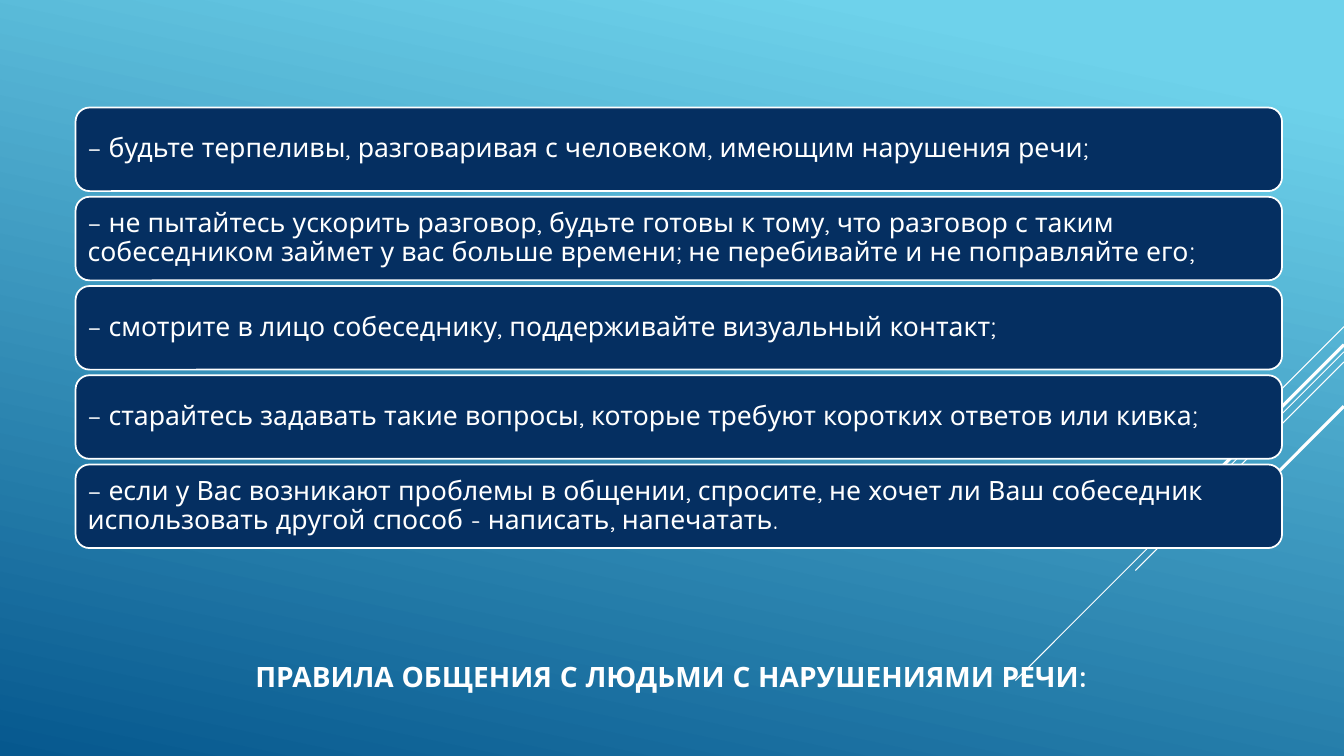
from pptx import Presentation
from pptx.dml.color import RGBColor
from pptx.enum.shapes import MSO_CONNECTOR, MSO_SHAPE
from pptx.enum.text import MSO_ANCHOR, PP_ALIGN
from pptx.oxml.xmlchemy import OxmlElement
from pptx.util import Pt

WIDTH, HEIGHT = 960, 540
LINE = MSO_CONNECTOR.STRAIGHT
ROUND = MSO_SHAPE.ROUNDED_RECTANGLE
MIDDLE = MSO_ANCHOR.MIDDLE
LEFT, CENTER = PP_ALIGN.LEFT, PP_ALIGN.CENTER

FONT = "Quicksand"
COLORS = {"sky": "6ED2EB", "sea": "06588E", "navy": "052F61", "white": "FFFFFF"}

TITLE = "ПРАВИЛА ОБЩЕНИЯ С ЛЮДЬМИ С НАРУШЕНИЯМИ РЕЧИ: "
RULES = [
    "− будьте терпеливы, разговаривая с человеком, имеющим нарушения речи;",
    "− не пытайтесь ускорить разговор, будьте готовы к тому, что разговор с таким "
    "собеседником займет у вас больше времени; не перебивайте и не поправляйте его;",
    "− смотрите в лицо собеседнику, поддерживайте визуальный контакт;",
    "− старайтесь задавать такие вопросы, которые требуют коротких ответов или кивка;",
    "− если у Вас возникают проблемы в общении, спросите, не хочет ли Ваш собеседник "
    "использовать другой способ - написать, напечатать.",
]
# Start height on the right edge, run to the left, line width
RAYS = [
    (233.3, 72, 0.75),
    (251.3, 234.7, 0.75),
    (258.5, 149, 0.75),
    (246.2, 137.5, 2.25),
    (290.2, 100, 2.25),
]


def color(name):
    return RGBColor.from_string(COLORS[name])


def write(frame, text, size, align, bold=False):
    frame.word_wrap = True
    frame.vertical_anchor = MIDDLE
    para = frame.paragraphs[0]
    para.text = text
    para.alignment = align
    font = para.font
    font.name, font.size, font.bold = FONT, Pt(size), bold
    font.color.rgb = color("white")
    return para


def paint_back(slide):
    fill = slide.background.fill
    fill.gradient()
    fill.gradient_angle = 258
    for stop, name, pos in zip(fill.gradient_stops, ("sky", "sea"), (0.1, 1)):
        stop.color.rgb = color(name)
        stop.position = pos


def add_rays(slide, right):
    """Draw diagonal lines falling to the left from the right edge."""
    for top, run, width in RAYS:
        ray = slide.shapes.add_connector(
            LINE, Pt(right), Pt(top), Pt(right - run), Pt(top + run))
        ray.line.color.rgb = color("white")
        ray.line.width = Pt(width)
        ray._element.spPr.append(OxmlElement("a:effectLst"))


def add_title(slide, left, top, width, height):
    box = slide.shapes.add_textbox(Pt(left), Pt(top), Pt(width), Pt(height))
    write(box.text_frame, TITLE, 20, CENTER, bold=True)


def add_rules(slide, left, top, width, height, gap=4):
    """Stack the rules as equal bars that fill the box."""
    bar = (height - gap * (len(RULES) - 1)) / len(RULES)
    for i, rule in enumerate(RULES):
        card = slide.shapes.add_shape(
            ROUND, Pt(left), Pt(top + i * (bar + gap)), Pt(width), Pt(bar))
        card.shadow.inherit = False
        card.fill.solid()
        card.fill.fore_color.rgb = color("navy")
        card.line.color.rgb = color("white")
        card.line.width = Pt(1.25)
        frame = card.text_frame
        frame.margin_left = frame.margin_right = Pt(5.7)
        frame.margin_top = frame.margin_bottom = Pt(5.7)
        write(frame, rule, 19, LEFT).line_spacing = 0.9


def main():
    deck = Presentation()
    deck.slide_width, deck.slide_height = Pt(WIDTH), Pt(HEIGHT)
    slide = deck.slides.add_slide(deck.slide_layouts[6])
    paint_back(slide)
    add_rays(slide, WIDTH)
    add_title(slide, 22.3, 440, 919.4, 85.7)
    add_rules(slide, 54, 76.8, 861.8, 314.7)
    deck.save("out.pptx")


if __name__ == "__main__":
    main()
